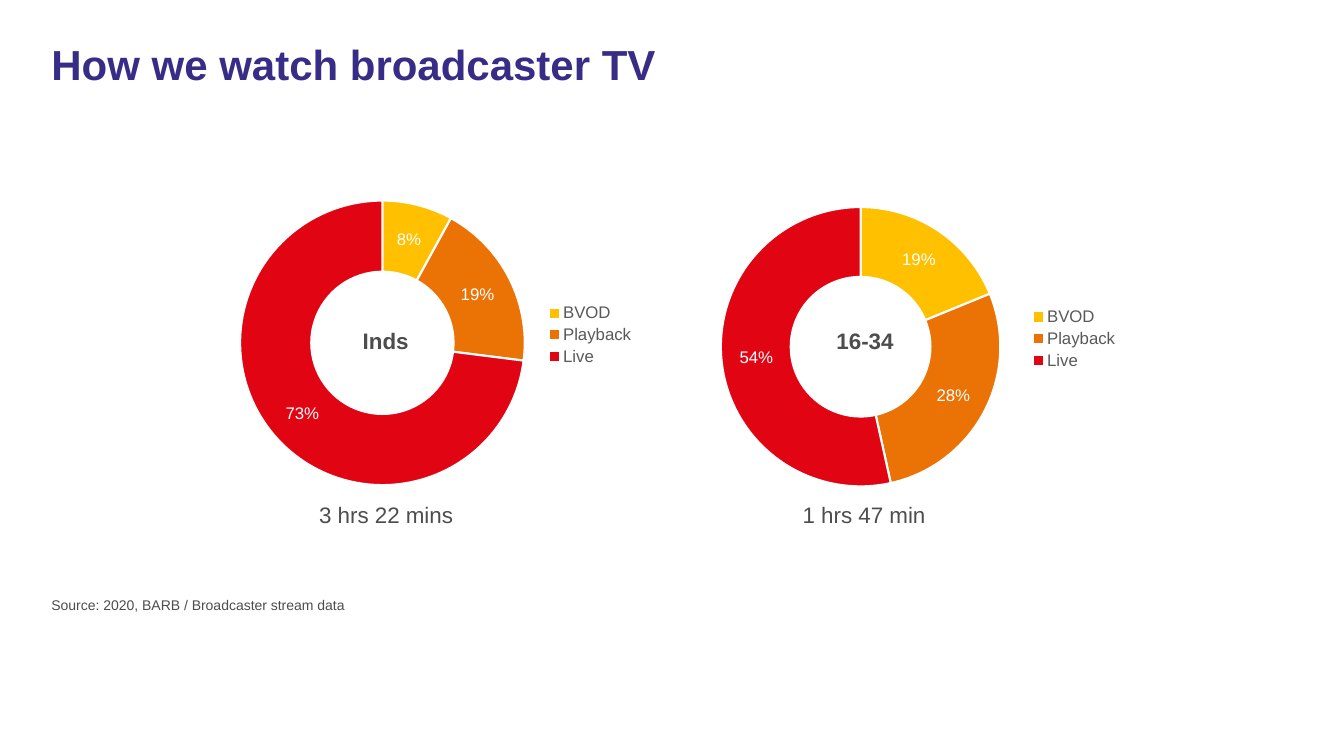
from lxml import etree
from pptx import Presentation
from pptx.chart.data import CategoryChartData
from pptx.dml.color import RGBColor
from pptx.enum.chart import XL_CHART_TYPE, XL_LEGEND_POSITION
from pptx.enum.text import MSO_ANCHOR, PP_ALIGN
from pptx.oxml.ns import qn
from pptx.util import Inches, Pt

DOUGHNUT = XL_CHART_TYPE.DOUGHNUT
LEGEND_RIGHT = XL_LEGEND_POSITION.RIGHT
TOP = MSO_ANCHOR.TOP
LEFT = PP_ALIGN.LEFT
CENTER = PP_ALIGN.CENTER

PURPLE = RGBColor(0x37, 0x2D, 0x87)
DARK_GRAY = RGBColor(0x4D, 0x4D, 0x4D)
LEGEND_GRAY = RGBColor(0x59, 0x59, 0x59)
BLACK = RGBColor(0, 0, 0)
WHITE = RGBColor(0xFF, 0xFF, 0xFF)
YELLOW = RGBColor(0xFF, 0xC0, 0x00)
ORANGE = RGBColor(0xEB, 0x73, 0x05)
RED = RGBColor(0xE1, 0x05, 0x14)

FONT = "Arial"
VIEWING_TYPES = ["BVOD", "Playback", "Live"]
SLICE_COLORS = [YELLOW, ORANGE, RED]


def write_text(shape, text, size, color, bold, alignment):
    text_frame = shape.text_frame
    text_frame.text = text
    text_frame.word_wrap = True
    text_frame.vertical_anchor = TOP
    paragraph = text_frame.paragraphs[0]
    paragraph.alignment = alignment
    paragraph.space_before = Pt(0)
    font = paragraph.runs[0].font
    font.name = FONT
    font.size = Pt(size)
    font.bold = bold
    font.color.rgb = color
    return paragraph


def set_layout(parent, index, settings):
    for old_layout in parent.findall(qn("c:layout")):
        parent.remove(old_layout)
    layout = etree.Element(qn("c:layout"))
    manual_layout = etree.SubElement(layout, qn("c:manualLayout"))
    for tag, value in settings.items():
        etree.SubElement(manual_layout, qn(f"c:{tag}")).set("val", str(value))
    parent.insert(index, layout)


presentation = Presentation()
presentation.slide_width = Inches(13.33)
presentation.slide_height = Inches(7.5)
slide = presentation.slides.add_slide(presentation.slide_layouts[1])

title = slide.shapes.title
title.left, title.top = Inches(0.41), Inches(0.39)
title.width, title.height = Inches(12.4), Inches(1.12)
paragraph = write_text(title, "How we watch broadcaster TV", 30, PURPLE, True, LEFT)
paragraph.line_spacing = 0.9

source = slide.placeholders[1]
source.left, source.top = Inches(0.41), Inches(5.87)
source.width, source.height = Inches(12.4), Inches(0.33)
paragraph = write_text(
    source, "Source: 2020, BARB / Broadcaster stream data", 10, DARK_GRAY, False, LEFT
)
properties = paragraph._p.get_or_add_pPr()
properties.set("marL", "0")
properties.set("indent", "0")
etree.SubElement(properties, qn("a:buNone"))

audiences = [
    {
        "name": "Inds", "time": "3 hrs 22 mins", "shares": [8, 19, 73],
        "left": 2.15, "width": 4.63, "plot": (0.05, 0.13, 0.61, 0.78),
        "legend": (0.7, 0.41), "time_left": 2.96, "name_left": 3.29, "name_width": 1.07,
    },
    {
        "name": "16-34", "time": "1 hrs 47 min", "shares": [19, 28, 54],
        "left": 6.88, "width": 4.87, "plot": (0.05, 0.17, 0.58, 0.72),
        "legend": (0.68, 0.42), "time_left": 7.7, "name_left": 8.11, "name_width": 0.94,
    },
]

for audience in audiences:
    chart_data = CategoryChartData()
    chart_data.categories = VIEWING_TYPES
    chart_data.add_series("Series 1", audience["shares"])
    chart = slide.shapes.add_chart(
        DOUGHNUT, Inches(audience["left"]), Inches(1.4),
        Inches(audience["width"]), Inches(3.85), chart_data,
    ).chart
    chart.has_title = False
    chart.font.name = FONT
    chart.font.size = Pt(10)
    chart.font.color.rgb = BLACK

    chart.has_legend = True
    legend = chart.legend
    legend.position = LEGEND_RIGHT
    legend.include_in_layout = False
    legend.font.name = FONT
    legend.font.size = Pt(12)
    legend.font.color.rgb = LEGEND_GRAY

    plot = chart.plots[0]
    plot.vary_by_categories = True
    for index, color in enumerate(SLICE_COLORS):
        slice_format = plot.series[0].points[index].format
        slice_format.fill.solid()
        slice_format.fill.fore_color.rgb = color
        slice_format.line.color.rgb = WHITE
        slice_format.line.width = Pt(1.5)

    plot.has_data_labels = True
    labels = plot.data_labels
    labels.show_value = True
    labels.show_percentage = False
    labels.number_format = '0"%"'
    labels.number_format_is_linked = False
    labels.font.name = FONT
    labels.font.size = Pt(12)
    labels.font.color.rgb = WHITE

    x, y, width, height = audience["plot"]
    plot_area = chart._chartSpace.chart.plotArea
    set_layout(plot_area, 0, {
        "layoutTarget": "inner", "xMode": "edge", "yMode": "edge",
        "x": x, "y": y, "w": width, "h": height,
    })
    x, y = audience["legend"]
    set_layout(legend._element, 1, {"xMode": "edge", "yMode": "edge", "x": x, "y": y})

for audience in audiences:
    time_box = slide.shapes.add_textbox(
        Inches(audience["time_left"]), Inches(4.92), Inches(1.74), Inches(0.37)
    )
    write_text(time_box, audience["time"], 16, DARK_GRAY, False, CENTER)
    name_box = slide.shapes.add_textbox(
        Inches(audience["name_left"]), Inches(3.2), Inches(audience["name_width"]), Inches(0.37)
    )
    write_text(name_box, audience["name"], 16, DARK_GRAY, True, CENTER)

presentation.save("out.pptx")
